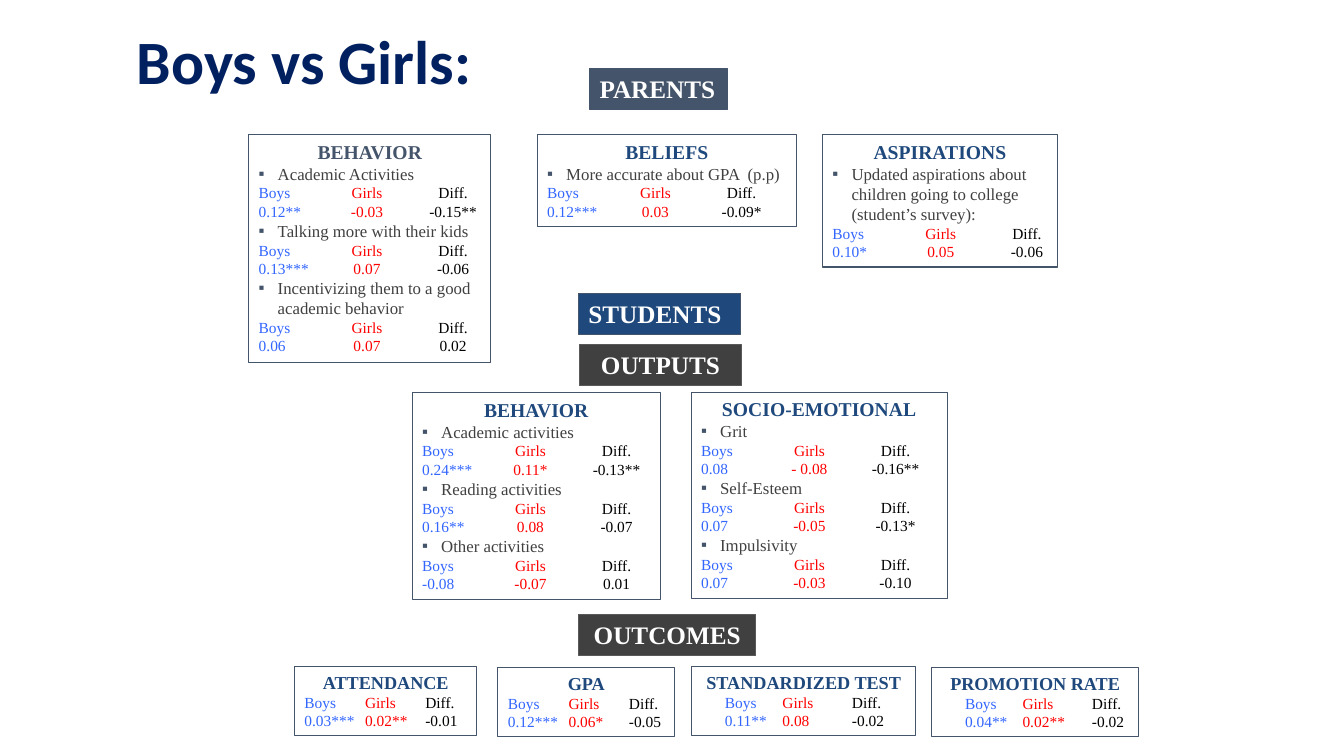
from lxml.etree import SubElement
from pptx import Presentation
from pptx.dml.color import RGBColor
from pptx.enum.shapes import MSO_SHAPE
from pptx.enum.text import MSO_ANCHOR, PP_ALIGN
from pptx.oxml.ns import qn
from pptx.util import Cm, Pt

WHITE = RGBColor(0xFF, 0xFF, 0xFF)
SLATE = RGBColor(0x44, 0x54, 0x6A)
BLUE = RGBColor(0x1F, 0x49, 0x7D)
NAVY = RGBColor(0x00, 0x20, 0x60)
DARK = RGBColor(0x40, 0x40, 0x40)
GRAY = RGBColor(0x59, 0x59, 0x59)
BOY = RGBColor(0x33, 0x66, 0xFF)
GIRL = RGBColor(0xFF, 0x00, 0x00)
BLACK = RGBColor(0x00, 0x00, 0x00)

SERIF = "Times New Roman"
HEADS = ("Boys", "Girls", "Diff.")
WIDE = (("ctr", 2.73), ("ctr", 4.9))
SLIM = (("l", 1.53), ("l", 3.05))
INSET = (("l", 0.6), ("l", 2.05), ("l", 3.8))


def set_font(item, size, color, bold=False, name=SERIF):
    font = item.font
    font.name, font.size, font.bold = name, Pt(size), bold
    font.color.rgb = color


def add_rect(slide, area, fill, line):
    rect = slide.shapes.add_shape(MSO_SHAPE.RECTANGLE, *map(Cm, area))
    rect.shadow.inherit = False
    rect.fill.solid()
    rect.fill.fore_color.rgb = fill
    rect.line.color.rgb = line
    rect.line.width = Pt(0.75)
    frame = rect.text_frame
    frame.word_wrap = True
    frame.vertical_anchor = MSO_ANCHOR.TOP
    return frame


def add_head(frame, text, size, color, align=PP_ALIGN.CENTER):
    para = frame.paragraphs[0]
    para.text = text
    para.alignment = align
    set_font(para, size, color, True)


def add_label(slide, text, area, fill, line, align):
    frame = add_rect(slide, area, fill, line)
    add_head(frame, text, 18, WHITE, align)


def add_topic(frame, text):
    para = frame.add_paragraph()
    para.text = text
    para.alignment = PP_ALIGN.LEFT
    props = para._p.get_or_add_pPr()
    props.set("marL", str(Cm(0.48)))
    props.set("indent", str(-Cm(0.48)))
    color = SubElement(props, qn("a:buClr"))
    SubElement(color, qn("a:srgbClr"), val=str(SLATE))
    SubElement(props, qn("a:buFont"), typeface="Arial")
    SubElement(props, qn("a:buChar"), char="▪")
    set_font(para, 12, DARK)


def add_row(frame, cells, stops):
    para = frame.add_paragraph()
    para.alignment = PP_ALIGN.LEFT
    tabs = SubElement(para._p.get_or_add_pPr(), qn("a:tabLst"))
    for kind, pos in stops:
        SubElement(tabs, qn("a:tab"), pos=str(Cm(pos)), algn=kind)
    lead = "\t" if len(stops) == len(cells) else ""
    for cell, color in zip(cells, (BOY, GIRL, BLACK)):
        run = para.add_run()
        run.text = lead + cell
        set_font(run, 11, color)
        lead = "\t"


def add_pair(frame, cells, stops):
    add_row(frame, HEADS, stops)
    add_row(frame, cells, stops)


def add_panel(slide, head, area, topics, color=BLUE):
    frame = add_rect(slide, area, WHITE, SLATE)
    add_head(frame, head, 14, color)
    for topic, *cells in topics:
        add_topic(frame, topic)
        add_pair(frame, cells, WIDE)


def add_result(slide, head, area, cells, stops):
    frame = add_rect(slide, area, WHITE, SLATE)
    add_head(frame, head, 13, BLUE)
    add_pair(frame, cells, stops)


def add_title(slide, text):
    box = slide.shapes.add_textbox(Cm(0), Cm(0.03), Cm(15.34), Cm(3.18))
    frame = box.text_frame
    frame.word_wrap = True
    frame.vertical_anchor = MSO_ANCHOR.MIDDLE
    para = frame.paragraphs[0]
    para.text = text
    para.alignment = PP_ALIGN.CENTER
    para.line_spacing = 0.9
    set_font(para, 44, NAVY, True, "Calibri")


def main():
    deck = Presentation()
    deck.slide_width, deck.slide_height = Cm(33.87), Cm(19.05)
    slide = deck.slides.add_slide(deck.slide_layouts[6])
    add_title(slide, "Boys vs Girls:")

    left, mid = PP_ALIGN.LEFT, PP_ALIGN.CENTER
    add_label(slide, "PARENTS", (14.86, 1.73, 3.48, 1.03), SLATE, SLATE, left)
    add_label(slide, "STUDENTS", (14.58, 7.39, 4.09, 1.03), BLUE, SLATE, left)
    add_label(slide, "OUTPUTS", (14.6, 8.69, 4.09, 1.03), DARK, GRAY, mid)
    add_label(slide, "OUTCOMES", (14.58, 15.49, 4.47, 1.03), DARK, GRAY, mid)

    add_panel(slide, "BEHAVIOR", (6.27, 3.4, 6.1, 5.74), [
        ("Academic Activities", "0.12**", "-0.03", "-0.15**"),
        ("Talking more with their kids", "0.13***", "0.07", "-0.06"),
        ("Incentivizing them to a good academic behavior",
         "0.06", "0.07", "0.02"),
    ], SLATE)
    add_panel(slide, "BELIEFS", (13.54, 3.4, 6.53, 2.31), [
        ("More accurate about GPA  (p.p)", "0.12***", "0.03", "-0.09*"),
    ])
    add_panel(slide, "ASPIRATIONS", (20.73, 3.4, 5.92, 3.33), [
        ("Updated aspirations about children going to college "
         "(student’s survey):", "0.10*", "0.05", "-0.06"),
    ])
    add_panel(slide, "BEHAVIOR", (10.39, 9.9, 6.25, 5.21), [
        ("Academic activities", "0.24***", "0.11*", "-0.13**"),
        ("Reading activities", "0.16**", "0.08", "-0.07"),
        ("Other activities", "-0.08", "-0.07", "0.01"),
    ])
    add_panel(slide, "SOCIO-EMOTIONAL", (17.42, 9.88, 6.45, 5.21), [
        ("Grit", "0.08", "- 0.08", "-0.16**"),
        ("Self-Esteem", "0.07", "-0.05", "-0.13*"),
        ("Impulsivity", "0.07", "-0.03", "-0.10"),
    ])

    add_result(slide, "ATTENDANCE", (7.42, 16.79, 4.6, 1.75),
               ("0.03***", "0.02**", "-0.01"), SLIM)
    add_result(slide, "GPA", (12.55, 16.81, 4.45, 1.75),
               ("0.12***", "0.06*", "-0.05"), SLIM)
    add_result(slide, "STANDARDIZED TEST", (17.42, 16.79, 5.66, 1.75),
               ("0.11**", "0.08", "-0.02"), INSET)
    add_result(slide, "PROMOTION RATE", (23.47, 16.81, 5.23, 1.75),
               ("0.04**", "0.02**", "-0.02"), INSET)
    deck.save("out.pptx")


if __name__ == "__main__":
    main()
